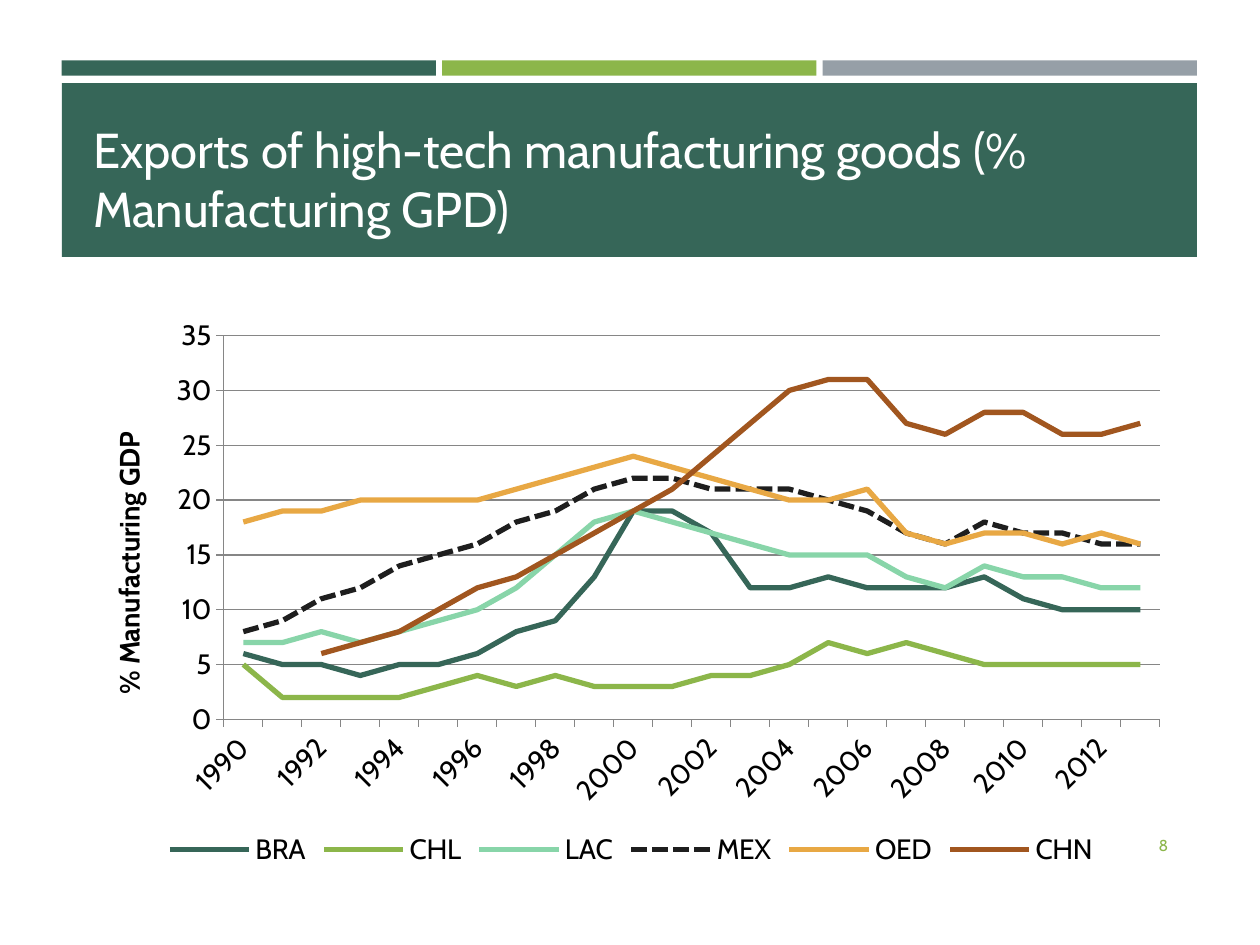
from dataclasses import dataclass
from typing import Any

from lxml import etree
from pptx import Presentation
from pptx.chart.data import CategoryChartData
from pptx.dml.color import RGBColor
from pptx.enum.chart import XL_CHART_TYPE as ChartType
from pptx.enum.chart import XL_LEGEND_POSITION as LegendPosition
from pptx.enum.chart import XL_TICK_MARK as TickMark
from pptx.enum.dml import MSO_LINE_DASH_STYLE as Dash
from pptx.enum.shapes import MSO_SHAPE as ShapeType
from pptx.enum.text import MSO_ANCHOR as Anchor
from pptx.enum.text import PP_ALIGN as Align
from pptx.oxml import parse_xml
from pptx.oxml.ns import nsdecls, qn
from pptx.util import Inches, Pt

FONT = "Cabin"
GREEN, LIME, GREY, GRID = "366658", "8CB64A", "969FA7", "868686"
WHITE, BLACK = "FFFFFF", "000000"


@dataclass(frozen=True)
class Box:
    left: float
    top: float
    width: float
    height: float

    def lengths(self) -> list[int]:
        return [Inches(v) for v in (self.left, self.top, self.width, self.height)]


@dataclass(frozen=True)
class Label:
    text: str
    box: Box
    size: int
    color: str
    anchor: Any
    align: Any


@dataclass(frozen=True)
class Country:
    name: str
    color: str
    values: list
    dash: Any = None


BARS = [(Box(0.49 + i * 3.02, 0.48, 2.97, 0.12), color)
        for i, color in enumerate((GREEN, LIME, GREY))]
BANNER = (Box(0.49, 0.66, 9.01, 1.38), GREEN)
LABELS = [
    Label("Exports of high-tech manufacturing goods (% Manufacturing GPD)",
          Box(0.64, 0.75, 8.74, 1.18), 28, WHITE, Anchor.BOTTOM, Align.LEFT),
    Label("8", Box(8.53, 6.51, 0.84, 0.4), 9, LIME, Anchor.MIDDLE, Align.RIGHT),
]
YEARS = [str(year) for year in range(1990, 2014)]
COUNTRIES = [
    Country("BRA", GREEN, [6, 5, 5, 4, 5, 5, 6, 8, 9, 13, 19, 19, 17, 12, 12, 13,
                           12, 12, 12, 13, 11, 10, 10, 10]),
    Country("CHL", LIME, [5, 2, 2, 2, 2, 3, 4, 3, 4, 3, 3, 3, 4, 4, 5, 7,
                          6, 7, 6, 5, 5, 5, 5, 5]),
    Country("LAC", "88D5A9", [7, 7, 8, 7, 8, 9, 10, 12, 15, 18, 19, 18, 17, 16, 15, 15,
                              15, 13, 12, 14, 13, 13, 12, 12]),
    Country("MEX", "1E1E1E", [8, 9, 11, 12, 14, 15, 16, 18, 19, 21, 22, 22, 21, 21, 21, 20,
                              19, 17, 16, 18, 17, 17, 16, 16], Dash.SQUARE_DOT),
    Country("OED", "E8A844", [18, 19, 19, 20, 20, 20, 20, 21, 22, 23, 24, 23, 22, 21, 20, 20,
                              21, 17, 16, 17, 17, 16, 17, 16]),
    Country("CHN", "A1561F", [None, None, 6, 7, 8, 10, 12, 13, 15, 17, 19, 21, 24, 27, 30, 31,
                              31, 27, 26, 28, 28, 26, 26, 27]),
]


def rgb(color: str) -> RGBColor:
    return RGBColor.from_string(color)


def apply(target: Any, formats: dict) -> None:
    for name, value in formats.items():
        setattr(target, name, value)


def style_font(font: Any, size: int, color: str, bold: bool = False) -> None:
    apply(font, {"name": FONT, "size": Pt(size), "bold": bold})
    font.color.rgb = rgb(color)


def style_line(line: Any, color: str, width: float) -> None:
    line.color.rgb = rgb(color)
    line.width = Pt(width)


def draw_bar(slide: Any, box: Box, color: str) -> None:
    shape = slide.shapes.add_shape(ShapeType.RECTANGLE, *box.lengths())
    shape.shadow.inherit = False
    shape.fill.solid()
    shape.fill.fore_color.rgb = rgb(color)
    shape.line.fill.background()


def draw_label(slide: Any, label: Label) -> None:
    frame = slide.shapes.add_textbox(*label.box.lengths()).text_frame
    apply(frame, {"word_wrap": True, "vertical_anchor": label.anchor})
    paragraph = frame.paragraphs[0]
    paragraph.alignment = label.align
    run = paragraph.add_run()
    run.text = label.text
    style_font(run.font, label.size, label.color)


def place_plot(chart: Any, x: float, y: float, w: float, h: float) -> None:
    """Fix the inner plot area, in fractions of the chart."""
    area = chart._chartSpace.find(".//" + qn("c:plotArea"))
    for old in area.findall(qn("c:layout")):
        area.remove(old)
    layout = parse_xml(f"<c:layout {nsdecls('c')}><c:manualLayout/></c:layout>")
    values = {"layoutTarget": "inner", "xMode": "edge", "yMode": "edge",
              "x": x, "y": y, "w": w, "h": h}
    for name, value in values.items():
        etree.SubElement(layout[0], qn(f"c:{name}")).set("val", str(value))
    area.insert(0, layout)


def style_axes(chart: Any) -> None:
    years, share = chart.category_axis, chart.value_axis
    for axis in (years, share):
        axis.major_tick_mark = TickMark.OUTSIDE
        style_font(axis.tick_labels.font, 16, BLACK)
        style_line(axis.format.line, GRID, 0.75)
    apply(share, {"minimum_scale": 0, "maximum_scale": 35, "major_unit": 5,
                  "has_major_gridlines": True})
    style_line(share.major_gridlines.format.line, GRID, 0.75)
    run = share.axis_title.text_frame.paragraphs[0].add_run()
    run.text = "% Manufacturing GDP"
    style_font(run.font, 16, BLACK, bold=True)

    # Slanted labels, every second year
    element = years._element
    element.find(qn("c:txPr")).find(qn("a:bodyPr")).set("rot", "-2700000")
    skip = parse_xml(f'<c:tickLblSkip {nsdecls("c")} val="2"/>')
    element.find(qn("c:noMultiLvlLbl")).addprevious(skip)


def draw_chart(slide: Any, box: Box) -> None:
    data = CategoryChartData(number_format="0")
    data.categories = YEARS
    for country in COUNTRIES:
        data.add_series(country.name, country.values)
    chart = slide.shapes.add_chart(ChartType.LINE, *box.lengths(), data).chart
    style_font(chart.font, 16, BLACK)
    apply(chart, {"has_title": False, "has_legend": True})
    apply(chart.legend, {"position": LegendPosition.BOTTOM, "include_in_layout": False})
    chart.plots[0].vary_by_categories = False
    for series, country in zip(chart.plots[0].series, COUNTRIES):
        series.smooth = False
        style_line(series.format.line, country.color, 3)
        if country.dash:
            series.format.line.dash_style = country.dash
    style_axes(chart)
    place_plot(chart, 0.13, 0.05, 0.85, 0.68)


def main() -> None:
    presentation = Presentation()
    apply(presentation, {"slide_width": Inches(10), "slide_height": Inches(7.5)})
    slide = presentation.slides.add_slide(presentation.slide_layouts[6])

    # Header bars and banner
    for box, color in [*BARS, BANNER]:
        draw_bar(slide, box, color)
    # Title and slide number
    for label in LABELS:
        draw_label(slide, label)
    # Export shares by country
    draw_chart(slide, Box(0.64, 2.44, 8.74, 4.48))

    presentation.save("out.pptx")


if __name__ == "__main__":
    main()
